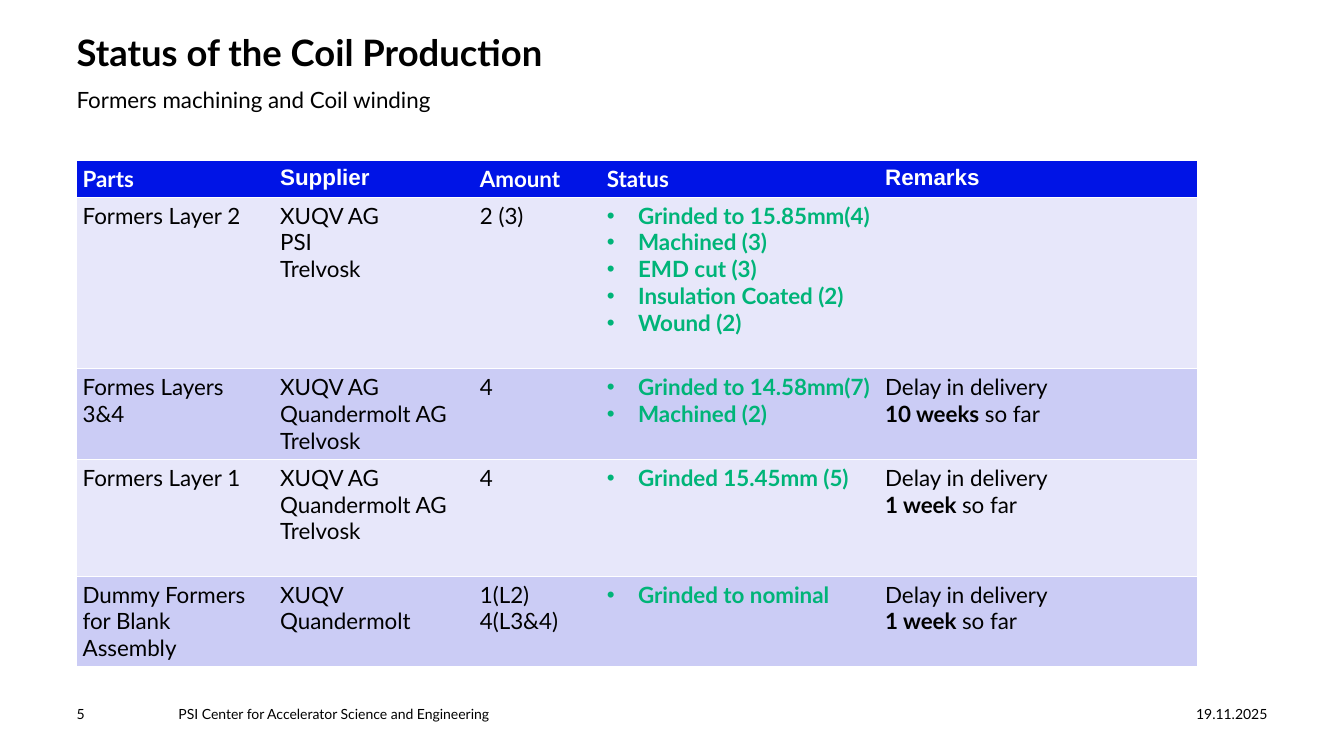
from lxml import etree
from pptx import Presentation
from pptx.dml.color import RGBColor
from pptx.enum.text import MSO_ANCHOR, PP_ALIGN
from pptx.oxml.ns import qn
from pptx.util import Inches, Pt

COLORS = {
    "text": "000000",
    "white": "FFFFFF",
    "header": "0014E6",
    "light_row": "E7E7FA",
    "dark_row": "CBCCF5",
    "done": "00B478",
}
TITLE_ONLY = 5
LEFT = 0.76
COLUMN_WIDTHS = [1.96, 1.98, 1.26, 2.76, 3.15]
ROW_HEIGHTS = [0.36, 1.7, 0.9, 1.16, 0.9]
STATUS_COLUMN = 3
HEADERS = ["Parts", "Supplier", "Amount", "Status", "Remarks"]
ARIAL_HEADERS = {"Supplier", "Remarks"}


def delay(duration):
    """Remark lines; a tuple is a bold lead followed by regular text."""
    return ["Delay in delivery", (f"{duration} ", "so far")]


COIL_ROWS = [
    [["Formers Layer 2"], ["XUQV AG", "PSI", "Trelvosk"], ["2 (3)"],
     ["Grinded to 15.85mm(4)", "Machined (3)", "EMD cut (3)",
      "Insulation Coated (2)", "Wound (2)"], []],
    [["Formes Layers 3&4"], ["XUQV AG", "Quandermolt AG", "Trelvosk"], ["4"],
     ["Grinded to 14.58mm(7)", "Machined (2)"], delay("10 weeks")],
    [["Formers Layer 1"], ["XUQV AG", "Quandermolt AG", "Trelvosk"], ["4"],
     ["Grinded 15.45mm (5)"], delay("1 week")],
    [["Dummy Formers", "for Blank Assembly"], ["XUQV", "Quandermolt"],
     ["1(L2)", "4(L3&4)"], ["Grinded to nominal"], delay("1 week")],
]


def add_bullet(paragraph):
    properties = paragraph._p.get_or_add_pPr()
    properties.set("marL", str(Inches(0.31)))
    properties.set("indent", str(-Inches(0.31)))
    etree.SubElement(properties, qn("a:buFont"), typeface="Arial")
    etree.SubElement(properties, qn("a:buChar"), char="•")


def write_text(frame, lines, size=16, font="Lato", color="text", bold=False,
               align=PP_ALIGN.LEFT, bullet=False):
    """Write one paragraph per line."""
    for index, line in enumerate(lines):
        paragraph = frame.add_paragraph() if index else frame.paragraphs[0]
        paragraph.alignment = align
        if bullet:
            add_bullet(paragraph)
        is_lead = isinstance(line, tuple)
        for position, text in enumerate(line if is_lead else (line,)):
            run = paragraph.add_run()
            run.text = text
            run.font.size = Pt(size)
            run.font.name = font
            run.font.bold = position == 0 if is_lead else bold
            run.font.color.rgb = RGBColor.from_string(COLORS[color])


def clear_margins(frame):
    frame.margin_left = frame.margin_right = 0
    frame.margin_top = frame.margin_bottom = 0
    frame.vertical_anchor = MSO_ANCHOR.TOP
    frame.word_wrap = True


def add_title(slide, text):
    title = slide.shapes.title
    title.left, title.top = Inches(LEFT), Inches(0.3)
    title.width, title.height = Inches(9.8), Inches(0.89)
    clear_margins(title.text_frame)
    write_text(title.text_frame, [text], size=26, bold=True)


def add_label(slide, text, left, top, width, height, **text_format):
    box = slide.shapes.add_textbox(
        Inches(left), Inches(top), Inches(width), Inches(height))
    clear_margins(box.text_frame)
    write_text(box.text_frame, [text], **text_format)


def set_borders(cell):
    """Draw white lines above and below the cell, none at its sides."""
    properties = cell._tc.get_or_add_tcPr()
    for index, side in enumerate(["lnL", "lnR", "lnT", "lnB"]):
        line = etree.Element(qn(f"a:{side}"), w=str(Pt(1)))
        if side in ("lnT", "lnB"):
            fill = etree.SubElement(line, qn("a:solidFill"))
            etree.SubElement(fill, qn("a:srgbClr"), val=COLORS["white"])
        else:
            etree.SubElement(line, qn("a:noFill"))
        properties.insert(index, line)


def fill_cell(cell, lines, fill, **text_format):
    cell.margin_left = cell.margin_right = Inches(0.06)
    cell.margin_top = cell.margin_bottom = Inches(0.05)
    cell.fill.solid()
    cell.fill.fore_color.rgb = RGBColor.from_string(COLORS[fill])
    set_borders(cell)
    write_text(cell.text_frame, lines, **text_format)


def add_status_table(slide):
    table = slide.shapes.add_table(
        len(ROW_HEIGHTS), len(COLUMN_WIDTHS), Inches(LEFT), Inches(1.59),
        Inches(sum(COLUMN_WIDTHS)), Inches(sum(ROW_HEIGHTS))).table
    for column, width in zip(table.columns, COLUMN_WIDTHS):
        column.width = Inches(width)
    for row, height in zip(table.rows, ROW_HEIGHTS):
        row.height = Inches(height)

    for column, header in enumerate(HEADERS):
        font = "Arial" if header in ARIAL_HEADERS else "Lato"
        fill_cell(table.cell(0, column), [header], "header",
                  font=font, color="white", bold=True)
    for row, contents in enumerate(COIL_ROWS, start=1):
        fill = "light_row" if row % 2 else "dark_row"
        for column, lines in enumerate(contents):
            is_status = column == STATUS_COLUMN
            fill_cell(table.cell(row, column), lines, fill, bold=is_status,
                      bullet=is_status, color="done" if is_status else "text")


def main():
    presentation = Presentation()
    presentation.slide_width = Inches(13.33)
    presentation.slide_height = Inches(7.5)
    slide = presentation.slides.add_slide(
        presentation.slide_layouts[TITLE_ONLY])

    add_title(slide, "Status of the Coil Production")
    add_status_table(slide)
    add_label(slide, "19.11.2025", 10.8, 7, 1.77, 0.16,
              size=10, align=PP_ALIGN.RIGHT)
    add_label(slide, "PSI Center for Accelerator Science and Engineering",
              1.77, 7, 8.8, 0.16, size=10)
    add_label(slide, "5", LEFT, 7, 0.77, 0.16, size=10)
    add_label(slide, "Formers machining and Coil winding",
              LEFT, 0.85, 9.8, 0.27)
    presentation.save("out.pptx")


if __name__ == "__main__":
    main()
